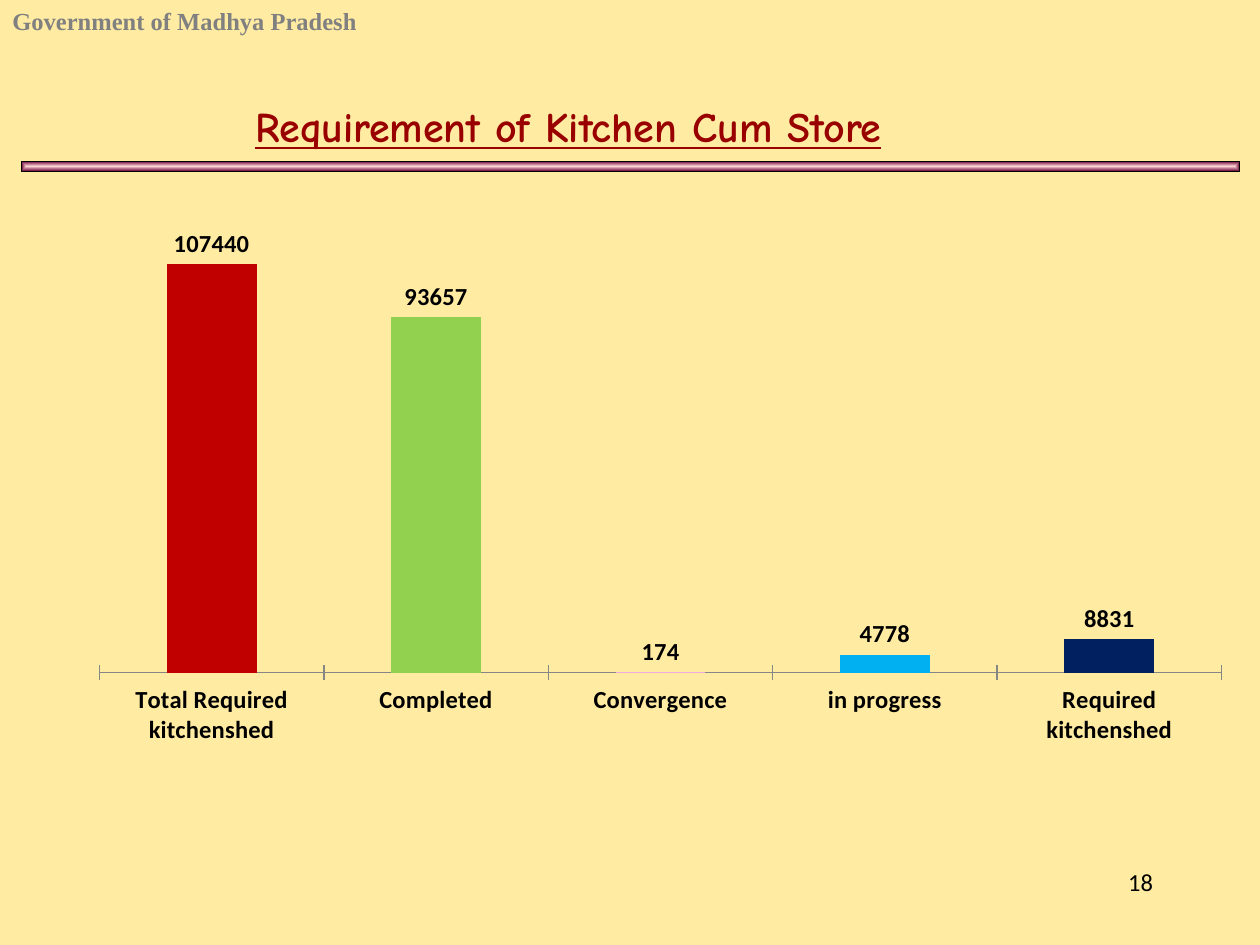
from lxml import etree
from pptx import Presentation
from pptx.chart.data import CategoryChartData
from pptx.dml.color import RGBColor
from pptx.enum.chart import XL_CHART_TYPE, XL_LABEL_POSITION, XL_TICK_MARK
from pptx.enum.shapes import MSO_SHAPE
from pptx.enum.text import PP_ALIGN
from pptx.oxml import parse_xml
from pptx.oxml.ns import nsdecls, qn
from pptx.util import Inches, Pt

LEFT, CENTER, RIGHT = PP_ALIGN.LEFT, PP_ALIGN.CENTER, PP_ALIGN.RIGHT
COLUMNS = XL_CHART_TYPE.COLUMN_CLUSTERED
OUTSIDE_END = XL_LABEL_POSITION.OUTSIDE_END
CROSS = XL_TICK_MARK.CROSS
RECTANGLE = MSO_SHAPE.RECTANGLE

KITCHENS = [
    ("Total Required kitchenshed", 107440, "C00000"),
    ("Completed", 93657, "92D050"),
    ("Convergence", 174, "F1A9DE"),
    ("in progress", 4778, "00B0F0"),
    ("Required kitchenshed", 8831, "002060"),
]


def color(hex_string):
    return RGBColor.from_string(hex_string)


class SlideBuilder:
    body_font = "Calibri"
    text_color = "000000"
    text_size = 14

    def __init__(self, presentation, background):
        self.slide = presentation.slides.add_slide(presentation.slide_layouts[6])
        fill = self.slide.background.fill
        fill.solid()
        fill.fore_color.rgb = color(background)

    def style(self, font, size=text_size, hex_string=text_color, name=body_font,
              bold=False, underline=False):
        font.size = Pt(size)
        font.name = name
        font.bold = bold
        font.underline = underline
        font.color.rgb = color(hex_string)

    def text(self, content, left, top, width, height, align=LEFT, **style):
        box = self.slide.shapes.add_textbox(
            Inches(left), Inches(top), Inches(width), Inches(height))
        box.text_frame.word_wrap = True
        paragraph = box.text_frame.paragraphs[0]
        paragraph.alignment = align
        run = paragraph.add_run()
        run.text = content
        self.style(run.font, **style)

    def gradient_bar(self, left, top, width, height, inner, outer):
        shape = self.slide.shapes.add_shape(
            RECTANGLE, Inches(left), Inches(top), Inches(width), Inches(height))
        shape.shadow.inherit = False
        shape.line.color.rgb = color(self.text_color)
        shape.line.width = Pt(0.5)
        # Gradient running from the centre to the edges
        gradient = parse_xml(
            f'<a:gradFill {nsdecls("a")} rotWithShape="1"><a:gsLst>'
            f'<a:gs pos="0"><a:srgbClr val="{inner}"/></a:gs>'
            f'<a:gs pos="100000"><a:srgbClr val="{outer}"/></a:gs></a:gsLst>'
            '<a:path path="shape"><a:fillToRect l="50000" t="50000" r="50000" b="50000"/>'
            '</a:path></a:gradFill>')
        shape._element.spPr.find(qn("a:prstGeom")).addnext(gradient)

    def column_chart(self, rows, left, top, width, height, maximum, plot_area):
        data = CategoryChartData()
        data.categories = [label for label, _, _ in rows]
        data.add_series("Series 1", [value for _, value, _ in rows])
        chart = self.slide.shapes.add_chart(
            COLUMNS, Inches(left), Inches(top), Inches(width), Inches(height), data).chart
        chart.has_legend = False
        chart.has_title = False
        self.style(chart.font, size=10)

        # Axes
        value_axis = chart.value_axis
        value_axis.minimum_scale = 0
        value_axis.maximum_scale = maximum
        value_axis.has_major_gridlines = False
        value_axis.visible = False
        category_axis = chart.category_axis
        category_axis.major_tick_mark = CROSS
        category_axis.format.line.color.rgb = color("868686")
        self.style(category_axis.tick_labels.font, bold=True)

        # Columns and value labels
        plot = chart.plots[0]
        plot.gap_width = 150
        plot.vary_by_categories = False
        plot.has_data_labels = True
        labels = plot.data_labels
        labels.show_value = True
        labels.position = OUTSIDE_END
        self.style(labels.font, bold=True)
        for index, (_, _, hex_string) in enumerate(rows):
            fill = plot.series[0].points[index].format.fill
            fill.solid()
            fill.fore_color.rgb = color(hex_string)
        self.place_plot(chart, plot_area)

    def place_plot(self, chart, plot_area):
        area = chart._chartSpace.chart.plotArea
        layout = area.find(qn("c:layout"))
        if layout is None:
            layout = etree.Element(qn("c:layout"))
            area.insert(0, layout)
        manual = etree.SubElement(layout, qn("c:manualLayout"))
        settings = [("layoutTarget", "inner"), ("xMode", "edge"), ("yMode", "edge")]
        settings += zip("xywh", plot_area)
        for tag, value in settings:
            etree.SubElement(manual, qn(f"c:{tag}")).set("val", str(value))


def main():
    presentation = Presentation()
    presentation.slide_width = Inches(10)
    presentation.slide_height = Inches(7.5)
    builder = SlideBuilder(presentation, "FFEBA2")

    # Header and rule
    builder.text("Government of Madhya Pradesh", 0, 0, 6.67, 0.34,
                 name="Times New Roman", hex_string="808080", bold=True)
    builder.gradient_bar(0.17, 1.28, 9.67, 0.08, "FFD5D5", "660033")

    # Title
    builder.text("Requirement of Kitchen Cum Store", -0.4, 0.75, 9.82, 0.5, CENTER,
                 name="Comic Neue", size=24, hex_string="990000", bold=True, underline=True)

    # Page number
    builder.text("18", 7.17, 6.83, 2.08, 0.5, RIGHT)

    # Kitchen shed chart
    builder.column_chart(KITCHENS, 0.17, 1.42, 9.83, 5, maximum=120000,
                         plot_area=(0.063, 0.06, 0.906, 0.724))

    presentation.save("out.pptx")


if __name__ == "__main__":
    main()
